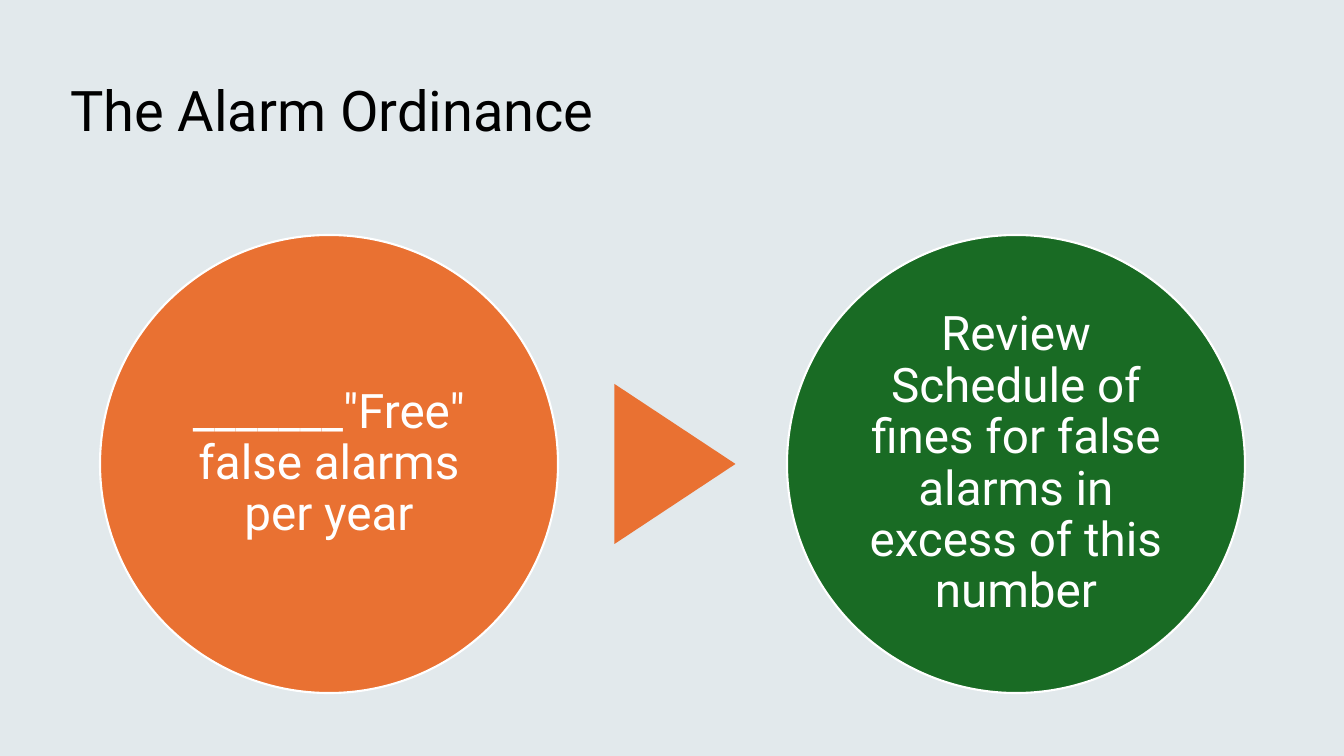
from pptx import Presentation
from pptx.dml.color import RGBColor
from pptx.enum.shapes import MSO_SHAPE
from pptx.enum.text import MSO_ANCHOR, MSO_AUTO_SIZE, PP_ALIGN
from pptx.util import Pt

TITLE = "The Alarm Ordinance"
STEPS = [
    ('_______"Free" false alarms per year', "E97132"),
    ("Review Schedule of fines for false alarms in excess of this number", "196B24"),
]
FONT = "Roboto"
BACKGROUND, WHITE, BLACK, ARROW = "E2E9EC", "FFFFFF", "000000", "E97132"
SLIDE_W, SLIDE_H = 1344, 756
CIRCLE_LEFT, CIRCLE_TOP, CIRCLE_SIZE, CIRCLE_STEP = 100, 235, 458, 687
ARROW_BASE, ARROW_LENGTH, ARROW_MID = 160, 121, 675


def px(n):
    return round(n * 914400 / 100.8)


def rgb(color):
    return RGBColor.from_string(color)


def write(tf, text, size, color, align):
    tf.text = text
    tf.word_wrap = True
    tf.auto_size = MSO_AUTO_SIZE.NONE
    tf.vertical_anchor = MSO_ANCHOR.MIDDLE
    p = tf.paragraphs[0]
    p.alignment = align
    p.line_spacing = 0.9
    font = p.runs[0].font
    font.name = FONT
    font.size = Pt(size)
    font.color.rgb = rgb(color)


def add_shape(s, kind, left, top, width, height, color):
    sp = s.shapes.add_shape(kind, px(left), px(top), px(width), px(height))
    sp.shadow.inherit = False
    sp.fill.solid()
    sp.fill.fore_color.rgb = rgb(color)
    sp.line.fill.background()
    return sp


def add_circle(s, left, text, color):
    sp = add_shape(s, MSO_SHAPE.OVAL, left, CIRCLE_TOP, CIRCLE_SIZE, CIRCLE_SIZE, color)
    sp.line.color.rgb = rgb(WHITE)
    sp.line.width = Pt(1.5)
    tf = sp.text_frame
    tf.margin_left = tf.margin_right = tf.margin_top = tf.margin_bottom = px(5)
    write(tf, text, 34, WHITE, PP_ALIGN.CENTER)


def main():
    prs = Presentation()
    prs.slide_width, prs.slide_height = px(SLIDE_W), px(SLIDE_H)
    s = prs.slides.add_slide(prs.slide_layouts[5])
    s.background.fill.solid()
    s.background.fill.fore_color.rgb = rgb(BACKGROUND)

    title = s.shapes.title
    title.left, title.top, title.width, title.height = px(60), px(40), px(1223), px(146)
    write(title.text_frame, TITLE, 40, BLACK, PP_ALIGN.LEFT)

    for i, (text, color) in enumerate(STEPS):
        add_circle(s, CIRCLE_LEFT + i * CIRCLE_STEP, text, color)

    middle = CIRCLE_TOP + CIRCLE_SIZE / 2
    arrow = add_shape(s, MSO_SHAPE.ISOSCELES_TRIANGLE, ARROW_MID - ARROW_BASE / 2,
                      middle - ARROW_LENGTH / 2, ARROW_BASE, ARROW_LENGTH, ARROW)
    arrow.rotation = 90

    prs.save("out.pptx")


if __name__ == "__main__":
    main()
